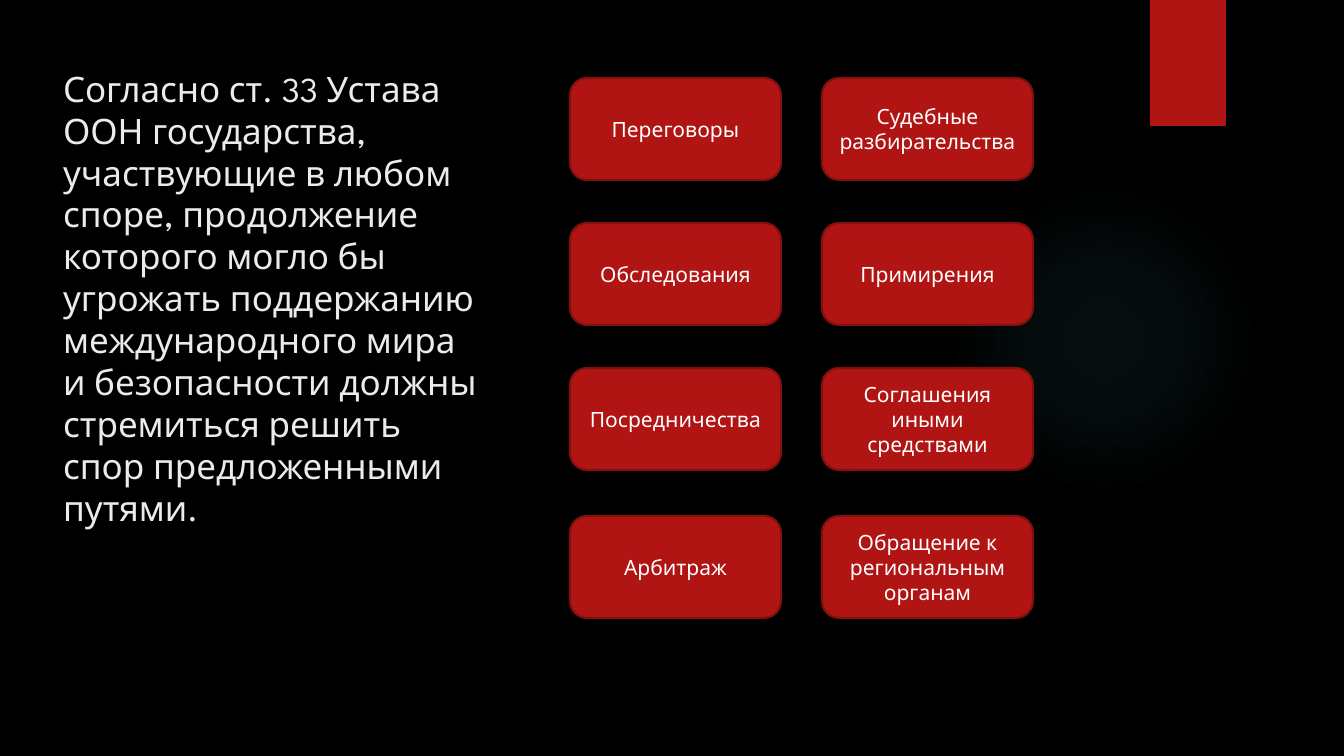
import pptx
import pptx.dml.color
import pptx.enum.shapes
import pptx.enum.text
import pptx.oxml
import pptx.oxml.ns
import pptx.util

RGBColor = pptx.dml.color.RGBColor
SHAPES = pptx.enum.shapes.MSO_SHAPE
ALIGN = pptx.enum.text.PP_ALIGN
ANCHOR = pptx.enum.text.MSO_ANCHOR

PX = 914400 / 100.8
SLIDE_SIZE = (1344, 756)
FONT = "League Spartan"

BLACK = RGBColor(0x00, 0x00, 0x00)
RED = RGBColor(0xB0, 0x15, 0x13)
DARK_RED = RGBColor(0x82, 0x10, 0x0E)
WHITE = RGBColor(0xFF, 0xFF, 0xFF)
PALE = RGBColor(0xEB, 0xEB, 0xEB)
TEAL = RGBColor(0x50, 0xB9, 0xC1)

GLOW_STOPS = ((0, 7), (36, 6), (69, 0))  # position and opacity, percent

ARTICLE = (
    "Согласно ст. 33 Устава ООН государства, участвующие в любом споре, "
    "продолжение которого могло бы угрожать поддержанию международного мира "
    "и безопасности должны стремиться решить спор предложенными путями."
)
MEANS = (
    ("Переговоры", "Судебные разбирательства"),
    ("Обследования", "Примирения"),
    ("Посредничества", "Соглашения иными средствами"),
    ("Арбитраж", "Обращение к региональным органам"),
)
ROW_OFFSETS = (0, 145, 290, 438)
CARD_SIZE = (211, 102)


def emu(px):
    return pptx.util.Emu(round(px * PX))


def apply_format(target, values):
    for name, value in values.items():
        setattr(target, name, value)


def write(shape, text, size, color, align, anchor):
    frame = shape.text_frame
    frame.text = text
    apply_format(frame, {
        "word_wrap": True,
        "auto_size": pptx.enum.text.MSO_AUTO_SIZE.NONE,
        "vertical_anchor": anchor,
    })
    paragraph = frame.paragraphs[0]
    paragraph.alignment = align
    font = paragraph.runs[0].font
    apply_format(font, {"name": FONT, "size": pptx.util.Pt(size)})
    font.color.rgb = color


def add_block(slide, kind, box):
    """Add a red preset shape without line or shadow."""
    block = slide.shapes.add_shape(kind, *map(emu, box))
    block.shadow.inherit = False
    block.fill.solid()
    block.fill.fore_color.rgb = RED
    block.line.fill.background()
    return block


def add_glow(slide, box):
    glow = add_block(slide, SHAPES.OVAL, box)
    stops = "".join(
        f'<a:gs pos="{position * 1000}"><a:srgbClr val="{TEAL}">'
        f'<a:alpha val="{opacity * 1000}"/></a:srgbClr></a:gs>'
        for position, opacity in GLOW_STOPS
    )
    gradient = pptx.oxml.parse_xml(
        f'<a:gradFill {pptx.oxml.ns.nsdecls("a")} rotWithShape="1">'
        f'<a:gsLst>{stops}</a:gsLst><a:path path="circle">'
        '<a:fillToRect l="50000" t="50000" r="50000" b="50000"/>'
        '</a:path></a:gradFill>'
    )
    properties = glow.element.spPr
    properties.replace(properties.find(pptx.oxml.ns.qn("a:solidFill")), gradient)


def add_article(slide, box):
    title = slide.shapes.title
    apply_format(title, dict(zip(("left", "top", "width", "height"), map(emu, box))))
    write(title, ARTICLE, 25, PALE, ALIGN.LEFT, ANCHOR.TOP)


def add_means(slide, box):
    """Place the cards in two columns spanning the width of the box."""
    left, top, width, _ = box
    card_width, card_height = CARD_SIZE
    for offset, row in zip(ROW_OFFSETS, MEANS):
        for column, label in enumerate(row):
            x = left + column * (width - card_width)
            card = add_block(slide, SHAPES.ROUNDED_RECTANGLE,
                             (x, top + offset, card_width, card_height))
            card.line.color.rgb = DARK_RED
            card.line.width = pptx.util.Pt(1.5)
            write(card, label, 15, WHITE, ALIGN.CENTER, ANCHOR.MIDDLE)


def main():
    deck = pptx.Presentation()
    deck.slide_width, deck.slide_height = map(emu, SLIDE_SIZE)
    slide = deck.slides.add_slide(deck.slide_layouts[5])
    slide.background.fill.solid()
    slide.background.fill.fore_color.rgb = BLACK

    add_glow(slide, (949, 184, 310, 310))
    add_block(slide, SHAPES.RECTANGLE, (1150, 0, 76, 126))
    add_article(slide, (53, 62, 442, 682))
    add_means(slide, (570, 78, 463, 540))
    deck.save("out.pptx")


if __name__ == "__main__":
    main()
